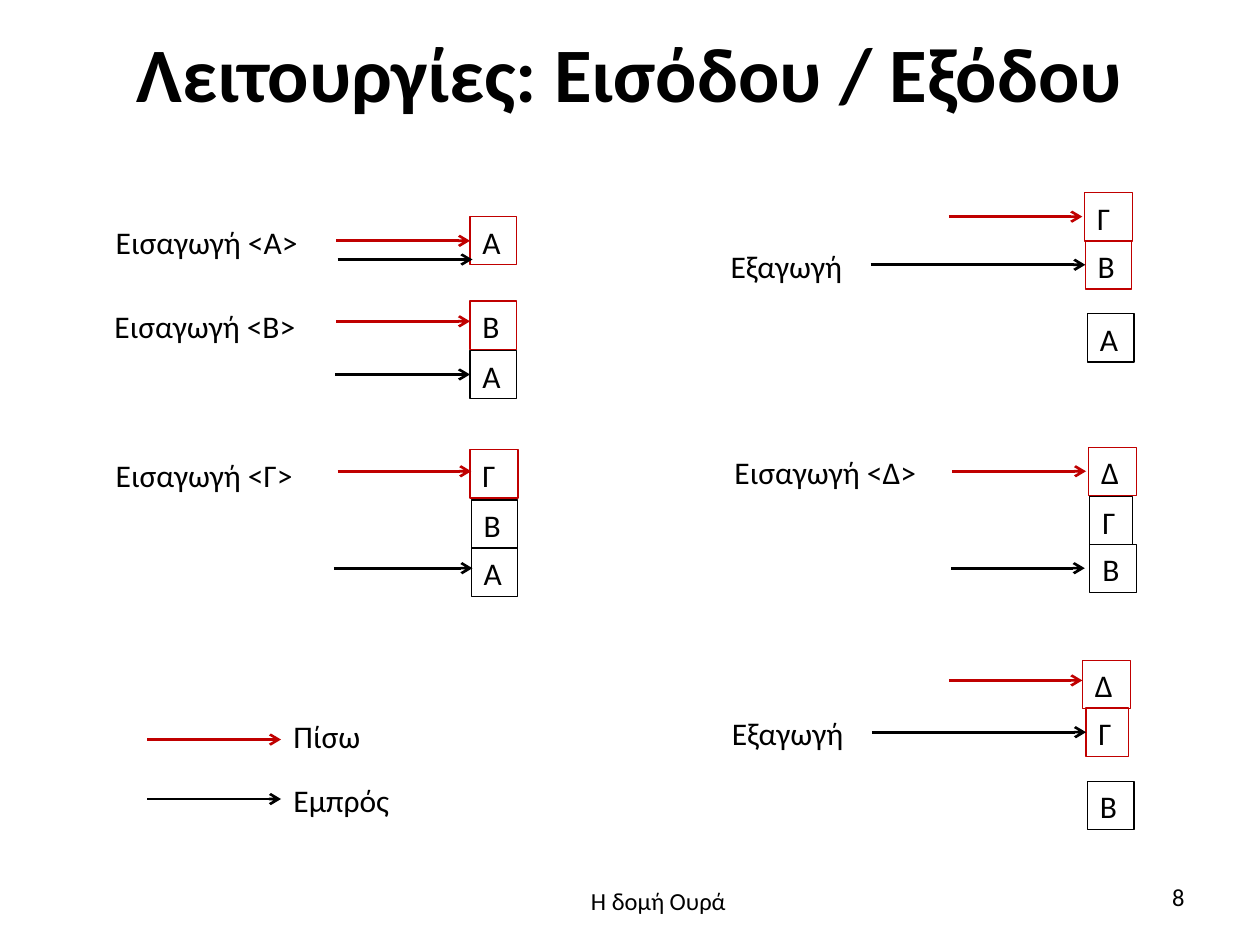
from lxml import etree
from pptx import Presentation
from pptx.dml.color import RGBColor
from pptx.enum.shapes import MSO_CONNECTOR, MSO_SHAPE
from pptx.enum.text import MSO_ANCHOR as ANCHOR, MSO_AUTO_SIZE as AUTO, PP_ALIGN as ALIGN
from pptx.oxml.ns import qn
from pptx.util import Pt

RED, BLACK = "C00000", "000000"
ROW = 27.6
LEFT, RIGHT = 1, 3

LABELS = {
    "insert_a": ("Εισαγωγή <Α>", 59, 123.8, 133.2),
    "insert_b": ("Εισαγωγή <Β>", 58.3, 172.1, 133.2),
    "insert_c": ("Εισαγωγή <Γ>", 59, 257, 131),
    "remove_a": ("Εξαγωγή", 410.4, 137.5, 87.1),
    "insert_d": ("Εισαγωγή <Δ>", 412.6, 255.6, 133.2),
    "remove_b": ("Εξαγωγή", 411.1, 404.6, 87.1),
    "rear": ("Πίσω", 160.6, 406.1, 56.9),
    "front": ("Εμπρός", 160.6, 442.8, 78.5),
}

QUEUES = {
    "insert_a": [("Α", 268.6, 123.8, 26.6, RED)],
    "insert_b": [("Β", 268.6, 172.1, 26.6, RED), ("Α", 268.6, 200.2, 26.6, BLACK)],
    "insert_c": [("Γ", 268.6, 257, 27.4, RED), ("Β", 269.3, 285.8, 26.6, BLACK),
                 ("Α", 269.3, 313.2, 26.6, BLACK)],
    "remove_a": [("Β", 620.2, 137.5, 26.6, RED), ("Α", 621.4, 179.3, 26.6, BLACK),
                 ("Γ", 619.9, 110.2, 27.4, RED)],
    "insert_d": [("Δ", 622.1, 255.6, 27.4, RED), ("Γ", 622.8, 283.7, 24.5, BLACK),
                 ("Β", 622.8, 311, 26.6, BLACK)],
    "remove_b": [("Γ", 620.6, 404.6, 24.5, RED), ("Β", 621.4, 446.4, 26.6, BLACK),
                 ("Δ", 618.5, 377.3, 27.4, RED)],
}

JOINED = [("insert_a", RED), ("remove_a", BLACK), ("remove_b", BLACK)]

FREE_ARROWS = [
    (193, 270, 148.3, BLACK),
    (192.2, 268.6, 183.6, RED),
    (193, 269.3, 269.3, RED),
    (190.8, 270, 324.7, BLACK),
    (542.2, 618.5, 123.8, RED),
    (544.3, 620.6, 269.3, RED),
    (543.6, 619.9, 324.7, BLACK),
    (542.2, 618.5, 388.8, RED),
    (84.2, 160.6, 422.6, RED),
]


def rgb(value):
    return RGBColor.from_string(value)


def set_text(sp, text, size, align=ALIGN.LEFT, bold=False):
    p = sp.text_frame.paragraphs[0]
    p.text = text
    p.alignment = align
    font = p.font
    font.name, font.size, font.bold = "Calibri", Pt(size), bold
    font.color.rgb = rgb(BLACK)


def add_text(s, text, x, y, w, h, size, align, bold=False):
    sp = s.shapes.add_textbox(Pt(x), Pt(y), Pt(w), Pt(h))
    sp.text_frame.word_wrap = True
    set_text(sp, text, size, align, bold)
    return sp


def add_title(s, text):
    tf = add_text(s, text, 3, -3.6, 714, 92, 44, ALIGN.CENTER, True).text_frame
    tf.vertical_anchor = ANCHOR.MIDDLE
    tf.margin_left = tf.margin_right = tf.margin_bottom = 0
    tf.margin_top = Pt(1.5)
    tf.paragraphs[0].line_spacing = 0.98


def fit_to_text(sp, text):
    set_text(sp, text, 18)
    tf = sp.text_frame
    tf.word_wrap = False
    tf.auto_size = AUTO.SHAPE_TO_FIT_TEXT
    tf.vertical_anchor = ANCHOR.TOP


def add_label(s, text, x, y, w):
    sp = s.shapes.add_textbox(Pt(x), Pt(y), Pt(w), Pt(ROW))
    fit_to_text(sp, text)
    return sp


def add_cell(s, text, x, y, w, color):
    sp = s.shapes.add_shape(MSO_SHAPE.RECTANGLE, Pt(x), Pt(y), Pt(w), Pt(ROW))
    sp.shadow.inherit = False
    sp.fill.background()
    sp.line.color.rgb = rgb(color)
    sp.line.width = Pt(0.75)
    fit_to_text(sp, text)
    return sp


def add_arrow(s, x1, x2, y, color):
    line = s.shapes.add_connector(MSO_CONNECTOR.STRAIGHT, Pt(x1), Pt(y), Pt(x2), Pt(y))
    line.line.color.rgb = rgb(color)
    line.line.width = Pt(1.5)
    etree.SubElement(line.line._get_or_add_ln(), qn("a:tailEnd"), type="arrow")
    etree.SubElement(line._element.spPr, qn("a:effectLst"))
    return line


def main():
    prs = Presentation()
    prs.slide_width, prs.slide_height = Pt(720), Pt(540)
    s = prs.slides.add_slide(prs.slide_layouts[6])

    add_title(s, "Λειτουργίες: Εισόδου / Εξόδου")
    add_text(s, "Η δομή Ουρά", 250.6, 502.6, 251.3, 39.6, 14, ALIGN.CENTER)
    add_text(s, "8", 516.2, 500.4, 167.8, 28.8, 14, ALIGN.RIGHT)

    labels = {key: add_label(s, *label) for key, label in LABELS.items()}
    queues = {key: [add_cell(s, *cell) for cell in cells] for key, cells in QUEUES.items()}

    for x1, x2, y, color in FREE_ARROWS:
        add_arrow(s, x1, x2, y, color)
    for key, color in JOINED:
        line = add_arrow(s, 0, 0, 0, color)
        line.begin_connect(labels[key], RIGHT)
        line.end_connect(queues[key][0], LEFT)
    add_arrow(s, 191.5, 0, 214, BLACK).end_connect(queues["insert_b"][1], LEFT)
    add_arrow(s, 84.2, 0, 456.6, BLACK).end_connect(labels["front"], LEFT)

    prs.save("out.pptx")


if __name__ == "__main__":
    main()
